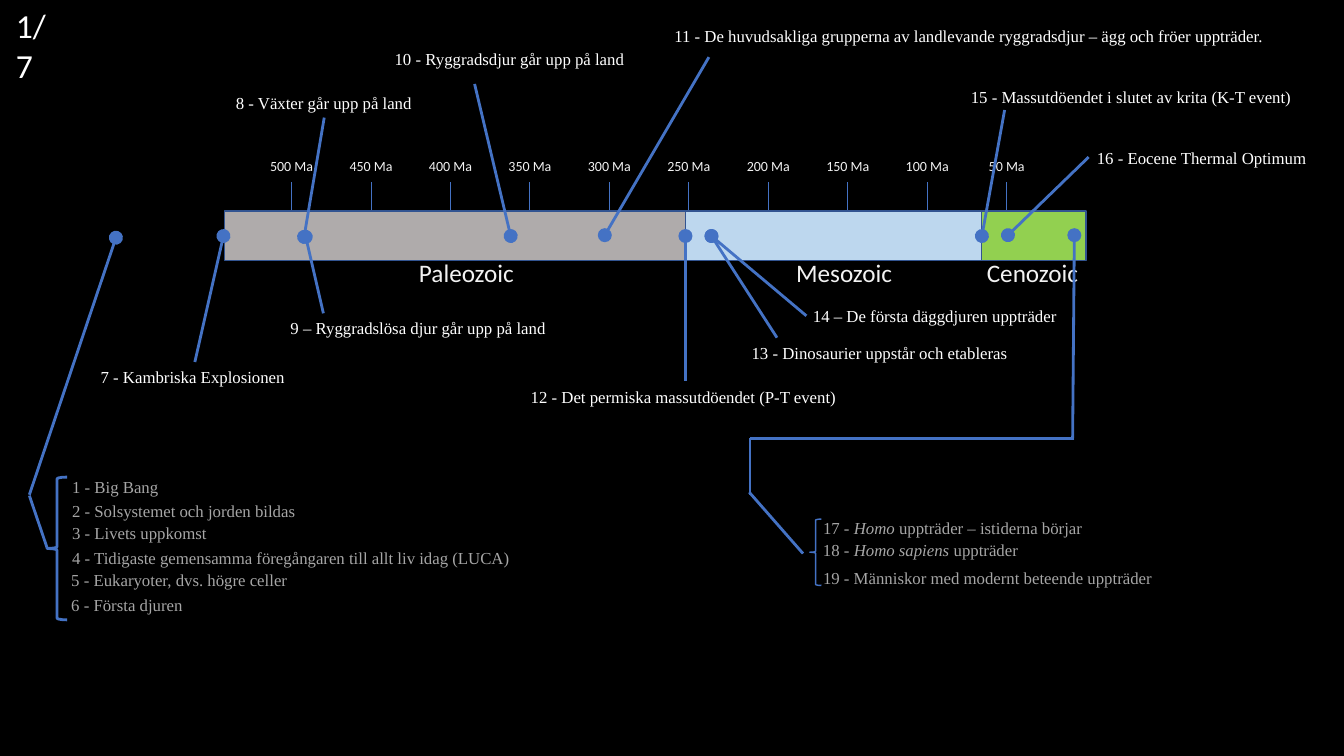
from dataclasses import dataclass

from lxml import etree
from pptx import Presentation
from pptx.dml.color import RGBColor
from pptx.enum.shapes import MSO_CONNECTOR, MSO_SHAPE
from pptx.enum.text import MSO_ANCHOR, MSO_AUTO_SIZE, PP_ALIGN
from pptx.oxml.ns import qn
from pptx.slide import Slide
from pptx.util import Inches, Pt

STRAIGHT = MSO_CONNECTOR.STRAIGHT
RECTANGLE, LEFT_BRACE = MSO_SHAPE.RECTANGLE, MSO_SHAPE.LEFT_BRACE
LEFT, CENTER = PP_ALIGN.LEFT, PP_ALIGN.CENTER
TOP, GROW = MSO_ANCHOR.TOP, MSO_AUTO_SIZE.SHAPE_TO_FIT_TEXT

BLACK = RGBColor(0x00, 0x00, 0x00)
WHITE = RGBColor(0xFF, 0xFF, 0xFF)
PALE = RGBColor(0xF2, 0xF2, 0xF2)
GREY = RGBColor(0xA6, 0xA6, 0xA6)
BLUE = RGBColor(0x44, 0x72, 0xC4)
BAR_EDGE = RGBColor(0x32, 0x54, 0x91)
TAUPE = RGBColor(0xAF, 0xAB, 0xAB)
SKY = RGBColor(0xBD, 0xD7, 0xEE)
GREEN = RGBColor(0x92, 0xD0, 0x50)

SANS, SERIF = "Calibri", "Times New Roman"

# The slide is a grid of 16 columns by 9 square rows.
COLUMNS, ROWS = 16, 9
CELL = Inches(7.5) / ROWS

PRESENT_COLUMN = 12.93
COLUMNS_PER_MA = 0.01892
BAR_ROW, BAR_ROWS = 2.51, 0.59


@dataclass(frozen=True)
class Label:
    text: str
    column: float
    row: float
    columns: float
    color: RGBColor = WHITE
    italic: str = ""
    wrap: bool = False
    rows: float = 0.36
    size: int = 12
    font: str = SERIF
    align: PP_ALIGN = LEFT


@dataclass(frozen=True)
class Era:
    name: str
    start_ma: int
    end_ma: int
    color: RGBColor
    name_column: float


@dataclass(frozen=True)
class Line:
    column: float
    row: float
    end_column: float
    end_row: float
    dot: bool = True
    width: float = 2


@dataclass(frozen=True)
class Brace:
    column: float
    row: float
    columns: float
    rows: float
    width: float


TITLE = Label("1/7", 0.07, 0, 0.8, rows=0.6, size=24, font=SANS)

ERAS = (
    Era("Paleozoic", 542, 252, TAUPE, 4.87),
    Era("Mesozoic", 252, 66, SKY, 9.36),
    Era("Cenozoic", 66, 0, GREEN, 11.63),
)

EVENTS = (
    Label("1 - Big Bang", 0.74, 5.62, 1.28, GREY),
    Label("2 - Solsystemet och jorden bildas", 0.74, 5.9, 2.94, GREY),
    Label("3 - Livets uppkomst", 0.74, 6.17, 1.87, GREY),
    Label("4 - Tidigaste gemensamma föregångaren till allt liv idag (LUCA)",
          0.74, 6.46, 5.7, GREY, wrap=True),
    Label("5 - Eukaryoter, dvs. högre celler", 0.73, 6.72, 2.84, GREY),
    Label("6 - Första djuren", 0.73, 7.02, 1.58, GREY),
    Label("7 - Kambriska Explosionen", 1.08, 4.31, 2.46),
    Label("8 - Växter går upp på land", 2.69, 1.04, 2.36),
    Label("9 – Ryggradslösa djur går upp på land", 3.34, 3.72, 3.32),
    Label("10 - Ryggradsdjur går upp på land", 4.58, 0.52, 3.01),
    Label("11 - De huvudsakliga grupperna av landlevande ryggradsdjur – "
          "ägg och fröer uppträder.", 7.91, 0.25, 7.56, wrap=True),
    Label("12 - Det permiska massutdöendet (P-T event)", 6.2, 4.54, 3.92),
    Label("13 - Dinosaurier uppstår och etableras", 8.83, 4.02, 3.32),
    Label("14 – De första däggdjuren uppträder", 9.56, 3.58, 3.18),
    Label("15 - Massutdöendet i slutet av krita (K-T event)", 11.44, 0.97, 4.1),
    Label("16 - Eocene Thermal Optimum", 12.94, 1.7, 2.77),
    Label("17 - Homo uppträder – istiderna börjar", 9.68, 6.1, 3.37, GREY, "Homo"),
    Label("18 - Homo sapiens uppträder", 9.68, 6.37, 2.59, GREY, "Homo sapiens"),
    Label("19 - Människor med modernt beteende uppträder", 9.68, 6.7, 4.21, GREY),
)

LEADERS = (
    Line(1.38, 2.83, 0.35, 5.89),
    Line(0.35, 5.9, 0.56, 6.52, dot=False),
    Line(2.66, 2.81, 2.32, 4.31),
    Line(3.62, 2.82, 3.86, 1.4),
    Line(3.64, 2.82, 3.85, 3.73),
    Line(6.08, 2.81, 5.65, 1),
    Line(7.2, 2.8, 8.44, 0.68),
    Line(8.16, 2.81, 8.16, 4.54),
    Line(8.47, 2.81, 9.25, 4.02),
    Line(8.47, 2.81, 9.6, 3.76),
    Line(11.69, 2.81, 11.96, 1.31),
    Line(12, 2.8, 12.96, 1.87),
    Line(12.79, 2.8, 12.77, 5.22),
    Line(12.79, 5.22, 8.93, 5.22, dot=False),
    Line(8.93, 5.22, 8.93, 5.89, dot=False),
    Line(8.92, 5.86, 9.56, 6.59, dot=False),
)

BRACES = (Brace(0.56, 5.68, 0.24, 1.7, 2), Brace(9.64, 6.18, 0.14, 0.79, 1))


def grid(*cells: float) -> list[int]:
    return [round(cell * CELL) for cell in cells]


def age_column(age_ma: float) -> float:
    """Column at which an age in millions of years falls on the time axis."""
    return PRESENT_COLUMN - age_ma * COLUMNS_PER_MA


def write_label(box, label: Label) -> None:
    """Place a text box or placeholder, then fill and format it."""
    box.left, box.top, box.width, box.height = grid(
        label.column, label.row, label.columns, label.rows)
    frame = box.text_frame
    frame.word_wrap, frame.auto_size = label.wrap, GROW
    frame.vertical_anchor = TOP
    para = frame.paragraphs[0]
    para.alignment = label.align
    pieces = label.text.partition(label.italic) if label.italic else (label.text,)
    for piece in pieces:
        span = para.add_run()
        span.text = piece
        span.font.name, span.font.size = label.font, Pt(label.size)
        span.font.color.rgb = label.color
        span.font.italic = piece == label.italic


def add_label(page: Slide, label: Label) -> None:
    write_label(page.shapes.add_textbox(0, 0, 0, 0), label)


def add_line(page: Slide, line: Line) -> None:
    connector = page.shapes.add_connector(
        STRAIGHT, *grid(line.column, line.row, line.end_column, line.end_row))
    connector.line.color.rgb, connector.line.width = BLUE, Pt(line.width)
    if line.dot:
        etree.SubElement(connector.line._get_or_add_ln(), qn("a:headEnd"),
                         type="oval", w="lg", len="lg")
    etree.SubElement(connector._element.spPr, qn("a:effectLst"))


def add_tick(page: Slide, age_ma: int) -> None:
    column = age_column(age_ma)
    add_line(page, Line(column, 2.17, column, 3.11, dot=False, width=0.5))
    add_label(page, Label(f"{age_ma} Ma", column - 0.38, 1.81, 0.76, PALE,
                          rows=0.32, size=10, font=SANS, align=CENTER))


def add_era(page: Slide, era: Era) -> None:
    start, end = age_column(era.start_ma), age_column(era.end_ma)
    bar = page.shapes.add_shape(
        RECTANGLE, *grid(start, BAR_ROW, end - start, BAR_ROWS))
    bar.shadow.inherit = False
    bar.fill.solid()
    bar.fill.fore_color.rgb = era.color
    bar.line.color.rgb, bar.line.width = BAR_EDGE, Pt(1)
    add_label(page, Label(era.name, era.name_column, 3.01, 1.38, PALE,
                          rows=0.48, size=18, font=SANS))


def add_brace(page: Slide, brace: Brace) -> None:
    shape = page.shapes.add_shape(
        LEFT_BRACE, *grid(brace.column, brace.row, brace.columns, brace.rows))
    shape.shadow.inherit = False
    shape.fill.background()
    shape.line.color.rgb, shape.line.width = BLUE, Pt(brace.width)


def main() -> None:
    deck = Presentation()
    deck.slide_width, deck.slide_height = grid(COLUMNS, ROWS)
    page = deck.slides.add_slide(deck.slide_layouts[5])
    page.background.fill.solid()
    page.background.fill.fore_color.rgb = BLACK
    write_label(page.shapes.title, TITLE)
    for age_ma in range(50, 501, 50):
        add_tick(page, age_ma)
    for draw, items in ((add_era, ERAS), (add_label, EVENTS),
                        (add_brace, BRACES), (add_line, LEADERS)):
        for item in items:
            draw(page, item)
    deck.save("out.pptx")


if __name__ == "__main__":
    main()
